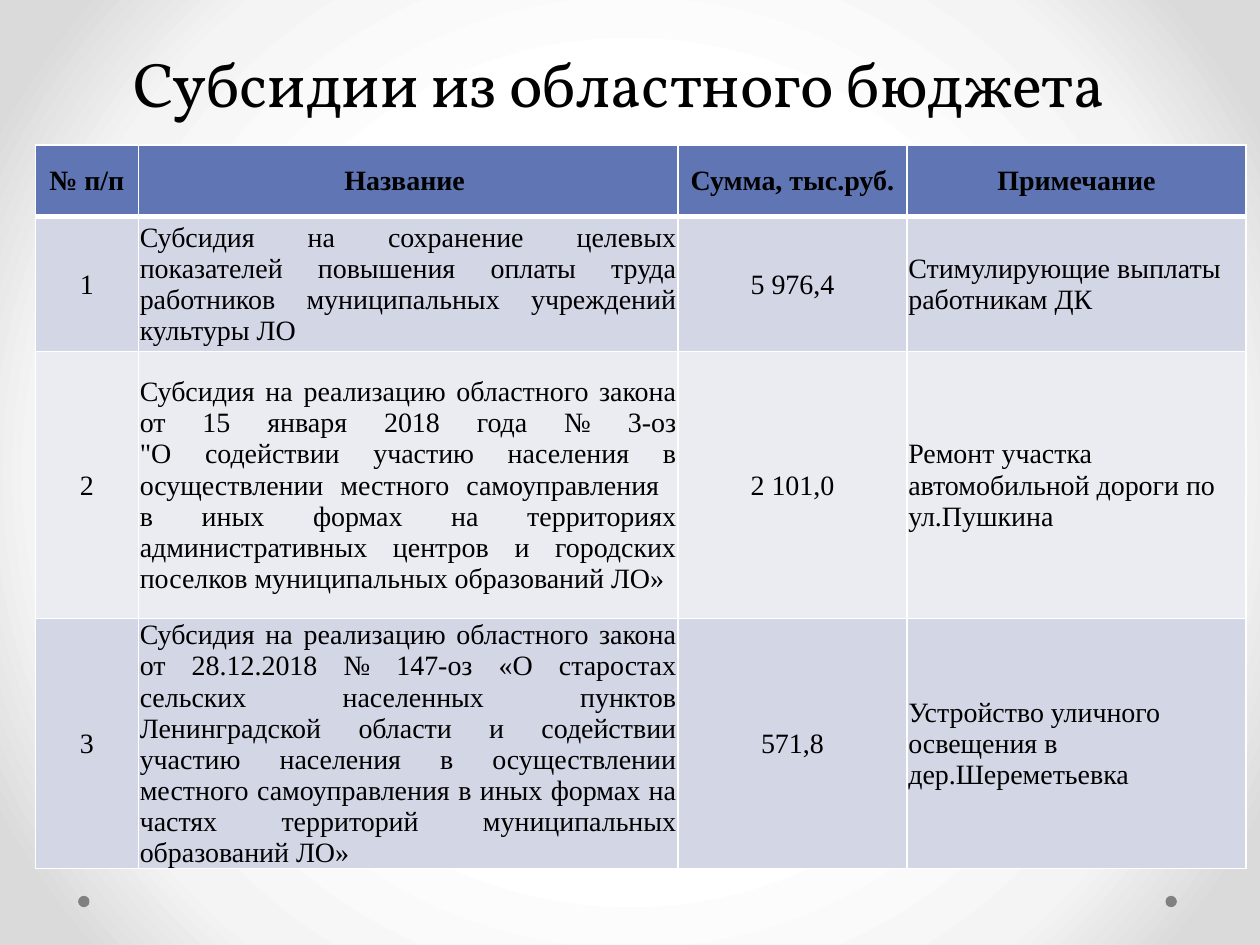
from pptx import Presentation
from pptx.dml.color import RGBColor
from pptx.enum.shapes import MSO_SHAPE
from pptx.enum.text import MSO_ANCHOR, MSO_AUTO_SIZE, PP_ALIGN
from pptx.oxml import parse_xml
from pptx.oxml.ns import qn
from pptx.util import Inches, Pt

BLACK = RGBColor(0x00, 0x00, 0x00)
GRAY = RGBColor(0x80, 0x80, 0x80)
HEADER = RGBColor(0x60, 0x76, 0xB4)
BANDS = [RGBColor(0xD2, 0xD6, 0xE5), RGBColor(0xEA, 0xEC, 0xF2)]
NS = 'xmlns:a="http://schemas.openxmlformats.org/drawingml/2006/main"'

TITLE = "Субсидии из областного бюджета "
ROWS = [
    ("№ п/п", "Название ", "Сумма, тыс.руб.", "Примечание"),
    ("1",
     "Субсидия на сохранение целевых показателей повышения оплаты труда "
     "работников муниципальных учреждений культуры ЛО",
     "5 976,4", "Стимулирующие выплаты работникам ДК"),
    ("2",
     "Субсидия на реализацию областного закона от 15 января 2018 года № 3-оз\n"
     "\"О содействии участию населения в осуществлении местного самоуправления \n"
     "в иных формах на территориях административных центров и городских "
     "поселков муниципальных образований ЛО»",
     "2 101,0", "Ремонт участка автомобильной дороги по ул.Пушкина"),
    ("3",
     "Субсидия на реализацию областного закона от 28.12.2018 № 147-оз "
     "«О старостах сельских населенных пунктов Ленинградской области и "
     "содействии участию населения в осуществлении местного самоуправления "
     "в иных формах на частях территорий муниципальных образований ЛО»",
     "571,8", "Устройство уличного освещения в дер.Шереметьевка"),
]
COL_WIDTHS = [0.82, 4.28, 1.82, 2.69]
ROW_HEIGHTS = [0.57, 1.07, 2.12, 1.98]
COL_ALIGN = [PP_ALIGN.CENTER, PP_ALIGN.JUSTIFY, PP_ALIGN.CENTER, PP_ALIGN.LEFT]
GRADIENT = [(0, "FFFFFF"), (50, "FFFFFF"), (76, "F4F4F4"), (92, "DADADA"), (100, "DADADA")]
DOTS_LEFT = [0.62, 9.25]


def set_background(s):
    s.background.fill.solid()
    stops = "".join(f'<a:gs pos="{pos * 1000}"><a:srgbClr val="{color}"/></a:gs>'
                    for pos, color in GRADIENT)
    solid = s._element.find(".//" + qn("p:bgPr")).find(qn("a:solidFill"))
    solid.getparent().replace(solid, parse_xml(
        f'<a:gradFill {NS} rotWithShape="1"><a:gsLst>{stops}</a:gsLst>'
        '<a:path path="circle"><a:fillToRect l="50000" t="50000" r="50000" b="50000"/>'
        '</a:path></a:gradFill>'))


def add_text(p, text, font, size, bold=False):
    for i, line in enumerate(text.split("\n")):
        if i:
            p.add_line_break()
        r = p.add_run()
        r.text = line
        r.font.name = font
        r.font.size = Pt(size)
        r.font.bold = bold
        r.font.color.rgb = BLACK


def set_borders(cell, bottom):
    tc_pr = cell._tc.get_or_add_tcPr()
    widths = {"lnL": 1, "lnR": 1, "lnT": 1, "lnB": bottom}
    for i, (side, width) in enumerate(widths.items()):
        tc_pr.insert(i, parse_xml(
            f'<a:{side} {NS} w="{Pt(width)}"><a:solidFill><a:srgbClr val="FFFFFF"/>'
            f'</a:solidFill></a:{side}>'))


def add_title(s):
    title = s.shapes.title
    title.left, title.top = Inches(0.43), Inches(0.29)
    title.width, title.height = Inches(9.07), Inches(0.71)
    tf = title.text_frame
    tf.word_wrap = True
    tf.auto_size = MSO_AUTO_SIZE.NONE
    tf.vertical_anchor = MSO_ANCHOR.BOTTOM
    p = tf.paragraphs[0]
    p.alignment = PP_ALIGN.CENTER
    p.line_spacing = Pt(58)
    add_text(p, TITLE, "Vollkorn", 36)


def add_subsidy_table(s):
    table = s.shapes.add_table(
        len(ROWS), len(COL_WIDTHS), Inches(0.28), Inches(1.15),
        Inches(sum(COL_WIDTHS)), Inches(sum(ROW_HEIGHTS))).table
    for col, width in zip(table.columns, COL_WIDTHS):
        col.width = Inches(width)
    for i, (row, height) in enumerate(zip(table.rows, ROW_HEIGHTS)):
        row.height = Inches(height)
        header = i == 0
        for cell, text, align in zip(row.cells, ROWS[i], COL_ALIGN):
            cell.fill.solid()
            cell.fill.fore_color.rgb = HEADER if header else BANDS[(i - 1) % 2]
            cell.vertical_anchor = MSO_ANCHOR.MIDDLE
            cell.margin_left = cell.margin_right = cell.margin_top = Inches(0.01)
            cell.margin_bottom = 0
            set_borders(cell, 3 if header else 1)
            p = cell.text_frame.paragraphs[0]
            p.alignment = PP_ALIGN.CENTER if header else align
            add_text(p, text, "Times New Roman", 16, header)


def add_dots(s):
    for left in DOTS_LEFT:
        dot = s.shapes.add_shape(MSO_SHAPE.OVAL, Inches(left), Inches(7.11),
                                 Inches(0.09), Inches(0.09))
        dot.shadow.inherit = False
        dot.fill.solid()
        dot.fill.fore_color.rgb = GRAY
        dot.line.fill.background()


def main():
    prs = Presentation()
    prs.slide_width, prs.slide_height = Inches(10), Inches(7.5)
    s = prs.slides.add_slide(prs.slide_layouts[5])
    set_background(s)
    add_dots(s)
    add_title(s)
    add_subsidy_table(s)
    prs.save("out.pptx")


if __name__ == "__main__":
    main()
